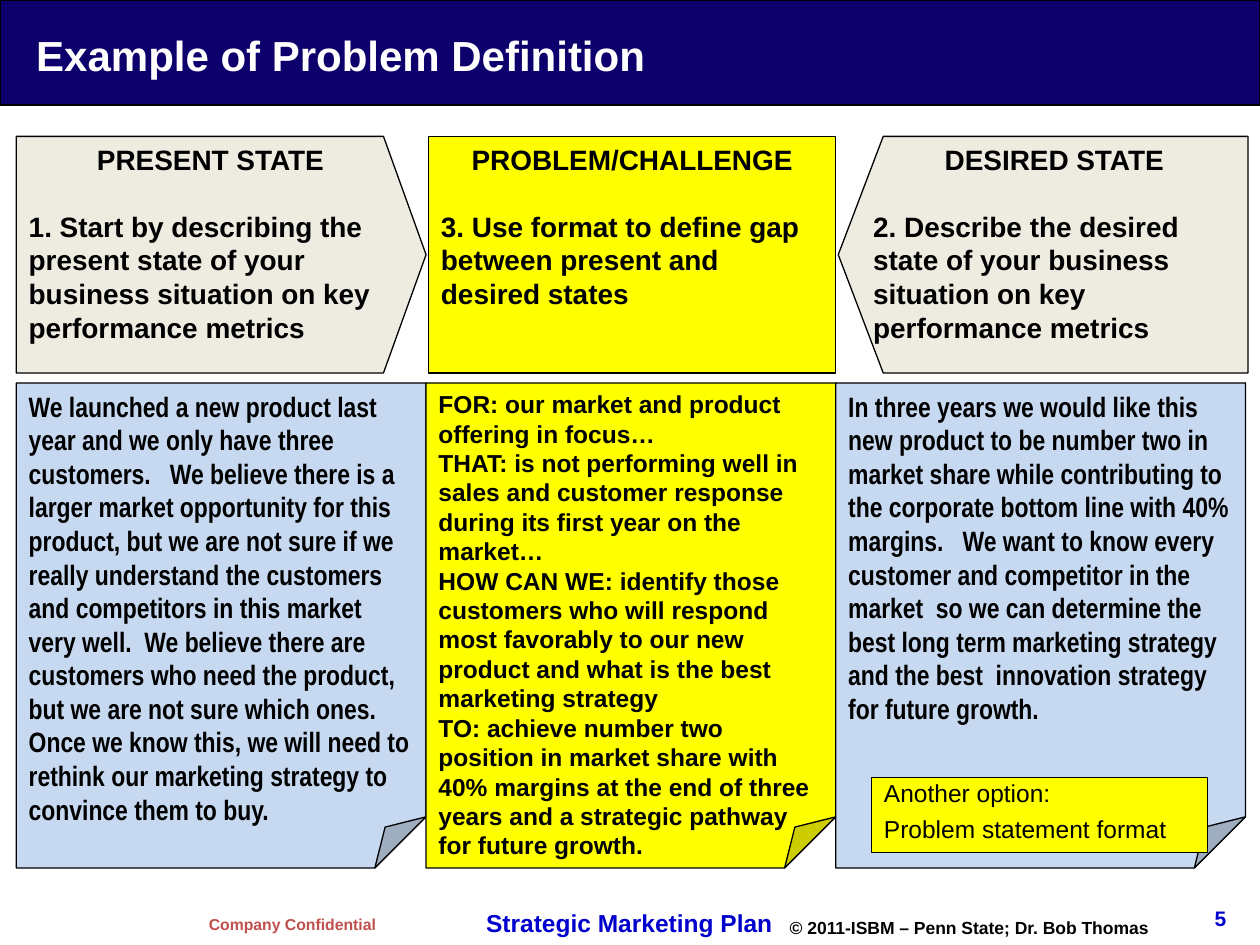
from lxml.etree import SubElement
from pptx import Presentation
from pptx.dml.color import RGBColor
from pptx.enum.shapes import MSO_SHAPE
from pptx.enum.text import MSO_ANCHOR, MSO_AUTO_SIZE, PP_ALIGN
from pptx.oxml.ns import qn
from pptx.util import Cm, Pt

NAVY = RGBColor(0x0D, 0x00, 0x6C)
BLUE = RGBColor(0x00, 0x00, 0xCC)
RED = RGBColor(0xC0, 0x50, 0x4D)
CREAM = RGBColor(0xEE, 0xEC, 0xE1)
PALE_BLUE = RGBColor(0xC6, 0xD9, 0xF1)
YELLOW = RGBColor(0xFF, 0xFF, 0x00)
BLACK = RGBColor(0, 0, 0)
WHITE = RGBColor(0xFF, 0xFF, 0xFF)

# Three equal columns: header shape above, folded note below
COL_LEFT, COL_W = 0.33, 8.26
HEAD_TOP, HEAD_H = 2.75, 4.77
NOTE_TOP, NOTE_H = 7.72, 9.78

HEADERS = [
    (MSO_SHAPE.PENTAGON, 0.18, CREAM, "PRESENT STATE",
     "1. Start by describing the present state of your business situation "
     "on key performance metrics"),
    (MSO_SHAPE.RECTANGLE, None, YELLOW, "PROBLEM/CHALLENGE",
     "3. Use format to define gap between present and desired states"),
    (MSO_SHAPE.PENTAGON, 0.19, CREAM, "DESIRED STATE",
     "2. Describe the desired state of your business situation on key "
     "performance metrics"),
]

NOTES = [
    (PALE_BLUE, "Arial Narrow", 16, [
        "We launched a new product last year and we only have three "
        "customers.   We believe there is a larger market opportunity for "
        "this product, but we are not sure if we really understand the "
        "customers and competitors in this market very well.  We believe "
        "there are customers who need the product, but we are not sure which "
        "ones.   Once we know this, we will need to rethink our marketing "
        "strategy to convince them to buy."]),
    (YELLOW, "Arial", 14, [
        "FOR: our market and product offering in focus…",
        "THAT: is not performing well in sales and customer response during "
        "its first year on the market…",
        "HOW CAN WE: identify those customers who will respond most favorably "
        "to our new product and what is the best marketing strategy",
        "TO: achieve number two position in market share with 40% margins at "
        "the end of three years and a strategic pathway for future growth."]),
    (PALE_BLUE, "Arial Narrow", 16, [
        "In three years we would like this new product to be number two in "
        "market share while contributing to the corporate bottom line with "
        "40% margins.   We want to know every customer and competitor in the "
        "market  so we can determine the best long term marketing strategy "
        "and the best  innovation strategy for future growth."]),
]


def write(tf, lines, size, color=BLACK, bold=True, font="Arial",
          align=PP_ALIGN.LEFT):
    """Fill a text frame with one paragraph per line."""
    tf.text = "\n".join(lines)
    for p in tf.paragraphs:
        p.alignment = align
        for r in p.runs:
            r.font.name, r.font.size = font, Pt(size)
            r.font.bold, r.font.color.rgb = bold, color


def add_box(s, kind, left, top, width, height, fill):
    """Add an outlined shape whose text starts at the top."""
    sp = s.shapes.add_shape(kind, Cm(left), Cm(top), Cm(width), Cm(height))
    sp.shadow.inherit = False
    sp.fill.solid()
    sp.fill.fore_color.rgb = fill
    sp.line.color.rgb = BLACK
    sp.line.width = Pt(0.75)
    sp.text_frame.word_wrap = True
    sp.text_frame.vertical_anchor = MSO_ANCHOR.TOP
    return sp


def add_label(s, left, top, width, height, text, size, color,
              align=PP_ALIGN.LEFT):
    tb = s.shapes.add_textbox(Cm(left), Cm(top), Cm(width), Cm(height))
    tb.text_frame.word_wrap = True
    write(tb.text_frame, [text], size, color, align=align)


def add_title(s, text):
    add_box(s, MSO_SHAPE.RECTANGLE, 0, 0, 25.4, 2.12, NAVY)
    title = s.shapes.title
    title.left, title.top = Cm(0.43), Cm(0.08)
    title.width, title.height = Cm(24.56), Cm(2.03)
    tf = title.text_frame
    tf.auto_size = MSO_AUTO_SIZE.NONE
    tf.vertical_anchor = MSO_ANCHOR.MIDDLE
    tf.margin_left = Cm(0.3)
    tf.margin_top = tf.margin_right = tf.margin_bottom = 0
    write(tf, [text], 24, WHITE)
    s.shapes._spTree.append(title._element)  # in front of the banner


def add_header(s, col, kind, point, fill, heading, step):
    left = COL_LEFT + col * COL_W
    sp = add_box(s, kind, left + (0.05 if col else 0), HEAD_TOP,
                 COL_W - (0.05 if col == 1 else 0), HEAD_H, fill)
    if point:
        sp.adjustments[0] = point
    if col == 2:  # the last arrow points back to the centre
        sp._element.spPr.xfrm.set("flipH", "1")
    write(sp.text_frame, [heading, step], 16)
    p = sp.text_frame.paragraphs[0]
    p.alignment = PP_ALIGN.CENTER
    p.space_after = Pt(19)


def add_note(s, col, fill, font, size, lines):
    sp = add_box(s, MSO_SHAPE.FOLDED_CORNER, COL_LEFT + col * COL_W,
                 NOTE_TOP, COL_W, NOTE_H, fill)
    # python-pptx lists no adjustment for this shape: set the fold size here
    guides = sp._element.spPr.find(qn("a:prstGeom")).get_or_add_avLst()
    SubElement(guides, qn("a:gd"), name="adj", fmla="val 12500")
    write(sp.text_frame, lines, size, font=font)


def add_option(s):
    sp = add_box(s, MSO_SHAPE.RECTANGLE, 17.57, 15.67, 6.78, 1.52, YELLOW)
    write(sp.text_frame, ["Another option:", "Problem statement format"], 14,
          bold=False)
    first, second = sp.text_frame.paragraphs
    first.line_spacing = second.line_spacing = 0.8
    second.space_before = Pt(7)


def main():
    prs = Presentation()
    prs.slide_width, prs.slide_height = Cm(25.4), Cm(19.05)
    s = prs.slides.add_slide(prs.slide_layouts[5])

    # Banner and title
    add_title(s, "Example of Problem Definition")

    # Columns
    for col, header in enumerate(HEADERS):
        add_header(s, col, *header)
    for col, note in enumerate(NOTES):
        add_note(s, col, *note)
    add_option(s)

    # Footer
    add_label(s, 3.96, 18.31, 4.2, 0.64, "Company Confidential", 9, RED)
    add_label(s, 9.55, 18.19, 6.6, 0.86, "Strategic Marketing Plan", 14, BLUE)
    add_label(s, 15.67, 18.36, 8.69, 0.69,
              "© 2011-ISBM – Penn State; Dr. Bob Thomas", 10, BLACK)
    add_label(s, 22.86, 18.14, 2.11, 0.71, "5", 12, BLUE, PP_ALIGN.RIGHT)

    prs.save("out.pptx")


if __name__ == "__main__":
    main()
